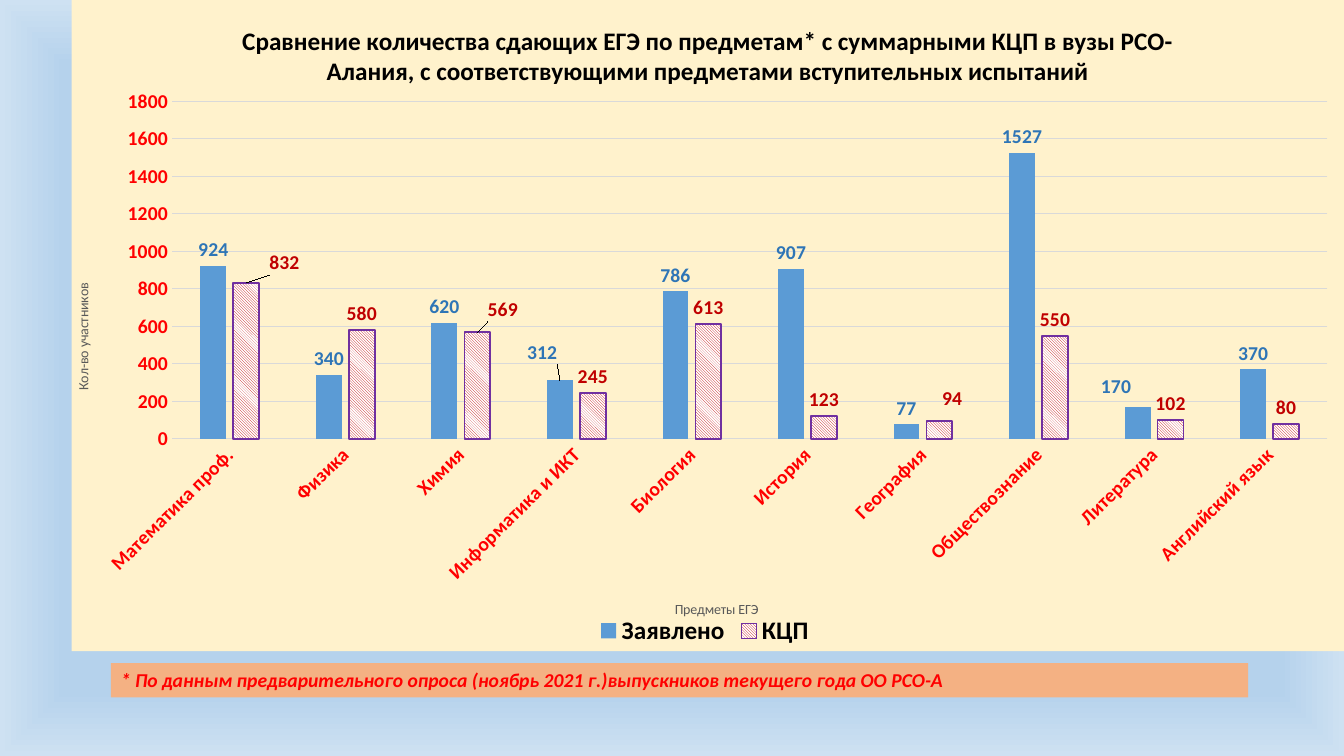
import pptx
import pptx.chart.data
import pptx.dml.color
import pptx.enum.chart
import pptx.enum.dml
import pptx.enum.shapes
import pptx.enum.text
import pptx.oxml
import pptx.oxml.ns
import pptx.util
from pptx.util import Inches

FONT = "Calibri"
RED, BLACK, GRAY, GRID = "FF0000", "000000", "595959", "D9D9D9"
SUBJECTS = ["Математика проф.", "Физика", "Химия", "Информатика и ИКТ", "Биология",
            "История", "География", "Обществознание", "Литература", "Английский язык"]
# Label shifts are fractions of the chart width and height, keyed by subject index.
SERIES = [
    {"name": "Заявлено", "values": [924, 340, 620, 312, 786, 907, 77, 1527, 170, 370],
     "label_color": "2E75B6", "shifts": {3: (-0.014, -0.018), 8: (-0.017, -0.006)}},
    {"name": "КЦП ", "values": [832, 580, 569, 245, 613, 123, 94, 550, 102, 80],
     "label_color": "C00000",
     "shifts": {0: (0.03, -0.006), 2: (0.02, -0.01), 6: (0.01, -0.01)}},
]
TITLE = ("Сравнение количества сдающих ЕГЭ по предметам* с суммарными КЦП в вузы РСО-Алания, "
         "с соответствующими предметами вступительных испытаний")
NOTE = "* По данным предварительного опроса (ноябрь 2021 г.)выпускников текущего года ОО РСО-А"


def rgb(color):
    return pptx.dml.color.RGBColor.from_string(color)


def set_font(font, size, color, **styles):
    values = {"name": FONT, "size": pptx.util.Pt(size), "bold": False, **styles}
    for attribute, value in values.items():
        setattr(font, attribute, value)
    font.color.rgb = rgb(color)


def set_line(line, color, width):
    line.color.rgb = rgb(color)
    line.width = pptx.util.Pt(width)


def manual_layout(**settings):
    """Return a c:layout element with the given settings in schema order."""
    items = "".join(f'<c:{name} val="{value}"/>' for name, value in settings.items())
    return pptx.oxml.parse_xml(
        f'<c:layout {pptx.oxml.ns.nsdecls("c")}><c:manualLayout>{items}'
        "</c:manualLayout></c:layout>")


def paint_background(slide):
    fill = slide.background.fill
    fill.gradient()
    stops = [(0, "F7FAFD"), (66, "B5D2EC"), (83, "B5D2EC"), (100, "CEE1F2")]
    stop_xml = "".join(f'<a:gs pos="{pos * 1000}"><a:srgbClr val="{color}"/></a:gs>'
                       for pos, color in stops)
    gradient = pptx.oxml.parse_xml(
        f'<a:gradFill {pptx.oxml.ns.nsdecls("a")} rotWithShape="1"><a:gsLst>{stop_xml}</a:gsLst>'
        '<a:path path="shape"><a:fillToRect l="50000" t="50000" r="50000" b="50000"/></a:path>'
        "</a:gradFill>")
    plain = slide._element.xpath(".//p:bgPr/a:gradFill")[0]
    plain.getparent().replace(plain, gradient)


def write_title(owner, text, size, color, **styles):
    owner.has_title = True
    frame = (owner.chart_title if hasattr(owner, "chart_title") else owner.axis_title).text_frame
    frame.text = text
    set_font(frame.paragraphs[0].runs[0].font, size, color, **styles)
    return frame


def format_axes(chart):
    for axis, title in ((chart.category_axis, "Предметы ЕГЭ"),
                        (chart.value_axis, "Кол-во участников")):
        axis.major_tick_mark = axis.minor_tick_mark = pptx.enum.chart.XL_TICK_MARK.NONE
        set_font(axis.tick_labels.font, 14, RED, bold=True)
        frame = write_title(axis, title, 10, GRAY)
    frame._txBody.bodyPr.set("rot", "-5400000")
    set_line(chart.category_axis.format.line, GRID, 0.75)
    chart.category_axis._element.xpath("c:txPr/a:bodyPr")[0].set("rot", "-2700000")
    chart.value_axis.format.line.fill.background()
    chart.value_axis.minimum_scale = 0
    chart.value_axis.maximum_scale = 1800
    chart.value_axis.major_unit = 200
    set_line(chart.value_axis.major_gridlines.format.line, GRID, 0.75)


def format_labels(series, label_color, shifts):
    outside = pptx.enum.chart.XL_LABEL_POSITION.OUTSIDE_END
    labels = series.data_labels
    labels.show_value = True
    labels.position = outside
    set_font(labels.font, 14, label_color, bold=True)
    for index, (x, y) in shifts.items():
        label = series.points[index].data_label
        set_font(label.font, 14, label_color, bold=True)
        label.position = outside
        idx = series._element.xpath(f'c:dLbls/c:dLbl/c:idx[@val="{index}"]')[0]
        idx.addnext(manual_layout(x=x, y=y))


def add_exam_chart(slide, left, top, width, height):
    exam_data = pptx.chart.data.CategoryChartData()
    exam_data.categories = SUBJECTS
    for entry in SERIES:
        exam_data.add_series(entry["name"], entry["values"])
    chart = slide.shapes.add_chart(pptx.enum.chart.XL_CHART_TYPE.COLUMN_CLUSTERED,
                                   left, top, width, height, exam_data).chart
    set_font(chart.font, 10, BLACK)
    write_title(chart, TITLE, 18, BLACK, bold=True)
    chart.chart_title.include_in_layout = False
    format_axes(chart)

    plot = chart.plots[0]
    plot.gap_width, plot.overlap, plot.vary_by_categories = 219, -27, False
    for series, entry in zip(plot.series, SERIES):
        format_labels(series, entry["label_color"], entry["shifts"])
    applied, quota = plot.series
    applied.format.fill.solid()
    applied.format.fill.fore_color.rgb = rgb("5B9BD5")
    hatch = quota.format.fill
    hatch.patterned()
    hatch.pattern = pptx.enum.dml.MSO_PATTERN.DARK_DOWNWARD_DIAGONAL
    hatch.fore_color.rgb = rgb("C00000")
    hatch.back_color.rgb = rgb("FFFFFF")
    set_line(quota.format.line, "7030A0", 1.25)

    chart.has_legend = True
    chart.legend.position = pptx.enum.chart.XL_LEGEND_POSITION.BOTTOM
    chart.legend.include_in_layout = False
    set_font(chart.legend.font, 18, BLACK, bold=True)

    plot_area = chart._chartSpace.chart.plotArea
    for automatic in plot_area.xpath("c:layout"):
        plot_area.remove(automatic)
    plot_area.insert(0, manual_layout(layoutTarget="inner", xMode="edge", yMode="edge",
                                      x=0.079, y=0.156, w=0.908, h=0.518))
    paper = pptx.oxml.parse_xml(
        f'<c:spPr {pptx.oxml.ns.nsdecls("c", "a")}><a:solidFill><a:srgbClr val="FFF2CC"/>'
        "</a:solidFill><a:ln><a:noFill/></a:ln></c:spPr>")
    chart._chartSpace.chart.addnext(paper)


def add_footnote(slide, left, top, width, height):
    band = slide.shapes.add_shape(pptx.enum.shapes.MSO_SHAPE.RECTANGLE, left, top, width, height)
    band.shadow.inherit = False
    band.fill.solid()
    band.fill.fore_color.rgb = rgb("F4B183")
    band.line.fill.background()
    frame = band.text_frame
    frame.word_wrap = True
    frame.vertical_anchor = pptx.enum.text.MSO_ANCHOR.TOP
    frame.text = NOTE
    frame.paragraphs[0].alignment = pptx.enum.text.PP_ALIGN.LEFT
    set_font(frame.paragraphs[0].runs[0].font, 14, RED, bold=True, italic=True)


def main():
    deck = pptx.Presentation()
    deck.slide_width, deck.slide_height = Inches(13.33), Inches(7.5)
    slide = deck.slides.add_slide(deck.slide_layouts[6])
    paint_background(slide)
    add_exam_chart(slide, Inches(0.71), Inches(0), Inches(12.62), Inches(6.46))
    add_footnote(slide, Inches(1.1), Inches(6.58), Inches(11.28), Inches(0.34))
    deck.save("out.pptx")


if __name__ == "__main__":
    main()
